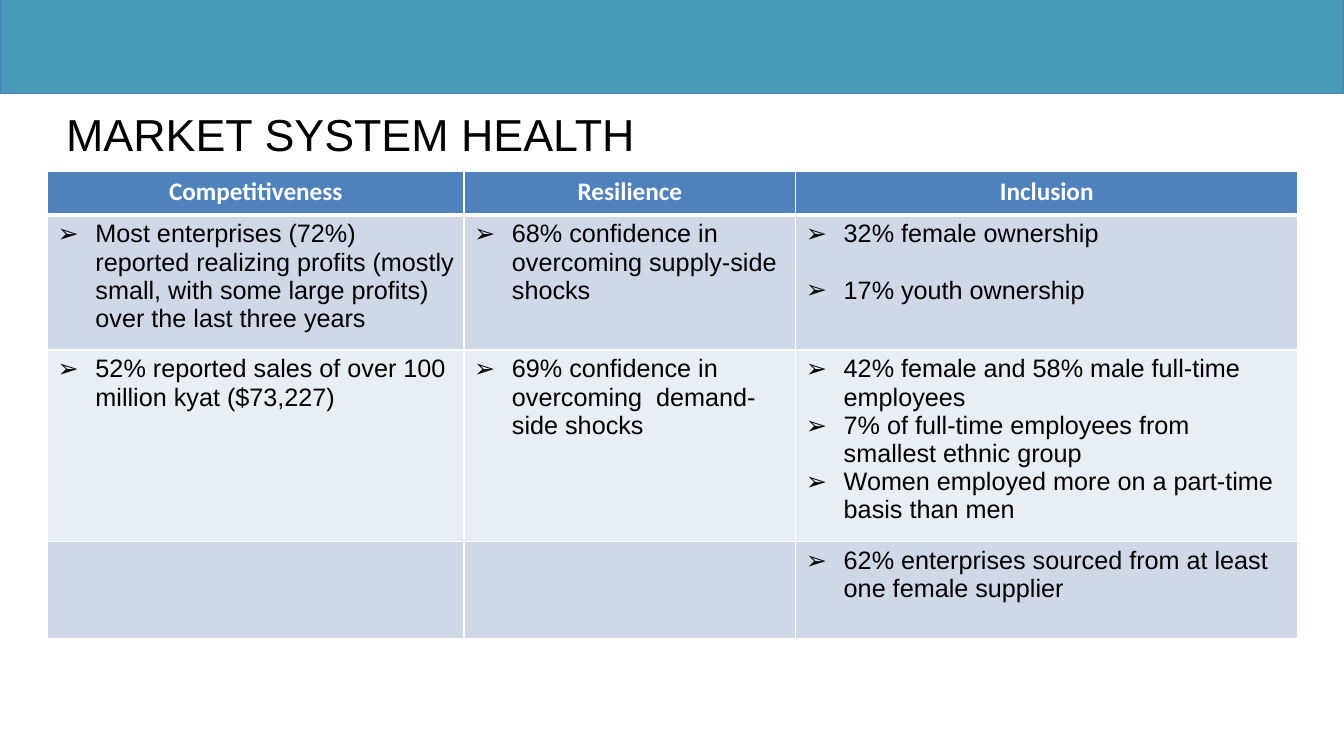
from lxml import etree
from pptx import Presentation
from pptx.dml.color import RGBColor
from pptx.enum import shapes, text
from pptx.oxml.ns import qn
from pptx.util import Pt

TEAL = RGBColor(0x47, 0x99, 0xB5)
EDGE = RGBColor(0x4B, 0x7E, 0xBC)
BLUE = RGBColor(0x4F, 0x81, 0xBD)
DARK = RGBColor(0xD0, 0xD8, 0xE8)
LIGHT = RGBColor(0xE9, 0xED, 0xF4)
WHITE = RGBColor(0xFF, 0xFF, 0xFF)
BLACK = RGBColor(0, 0, 0)

HEADS = ["Competitiveness", "Resilience", "Inclusion"]
ROWS = [
    [["Most enterprises (72%) reported realizing profits (mostly small, "
      "with some large profits) over the last three years"],
     ["68% confidence in overcoming supply-side shocks"],
     ["32% female ownership", "17% youth ownership"]],
    [["52% reported sales of over 100 million kyat ($73,227)"],
     ["69% confidence in overcoming  demand-side shocks"],
     ["42% female and 58% male full-time employees",
      "7% of full-time employees from smallest ethnic group",
      "Women employed more on a part-time basis than men"]],
    [[], [], ["62% enterprises sourced from at least one female supplier"]],
]
WIDTHS = [297.5, 237, 358.5]
HEIGHTS = [31, 96.5, 128.5, 69]


def style(para, size, name, color, bold=False):
    font = para.font
    font.size, font.name, font.bold = Pt(size), name, bold
    font.color.rgb = color


def paint(cell, color, base):
    """Give the cell white borders, the bottom one base points wide, and a fill."""
    props = cell._tc.get_or_add_tcPr()
    for side, width in zip("LRTB", (1, 1, 1, base)):
        line = etree.SubElement(props, qn("a:ln" + side), w=str(Pt(width)))
        fill = etree.SubElement(line, qn("a:solidFill"))
        etree.SubElement(fill, qn("a:srgbClr"), val=str(WHITE))
    cell.fill.solid()
    cell.fill.fore_color.rgb = color


prs = Presentation()
prs.slide_width, prs.slide_height = Pt(960), Pt(540)
slide = prs.slides.add_slide(prs.slide_layouts[6])

band = slide.shapes.add_shape(shapes.MSO_SHAPE.RECTANGLE, 0, 0, Pt(960), Pt(67))
band.shadow.inherit = False
band.fill.solid()
band.fill.fore_color.rgb = TEAL
band.line.color.rgb = EDGE
band.line.width = Pt(0.75)

title = slide.shapes.add_textbox(Pt(21), Pt(70), Pt(459), Pt(47))
frame = title.text_frame
frame.word_wrap = True
frame.margin_bottom = 0
frame.vertical_anchor = text.MSO_ANCHOR.MIDDLE
para = frame.paragraphs[0]
para.text = "MARKET SYSTEM HEALTH"
para.alignment = text.PP_ALIGN.CENTER
style(para, 32, "Arial", BLACK)

table = slide.shapes.add_table(
    len(HEIGHTS), len(WIDTHS), Pt(34), Pt(122.5),
    Pt(sum(WIDTHS)), Pt(sum(HEIGHTS))).table
for col, width in zip(table.columns, WIDTHS):
    col.width = Pt(width)
for row, height in zip(table.rows, HEIGHTS):
    row.height = Pt(height)

for c, head in enumerate(HEADS):
    cell = table.cell(0, c)
    paint(cell, BLUE, 3)
    para = cell.text_frame.paragraphs[0]
    para.text = head
    para.alignment = text.PP_ALIGN.CENTER
    style(para, 18, "Calibri", WHITE, True)

for r, row in enumerate(ROWS, 1):
    for c, items in enumerate(row):
        cell = table.cell(r, c)
        paint(cell, DARK if r % 2 else LIGHT, 1)
        frame = cell.text_frame
        for i, item in enumerate(items):
            para = frame.add_paragraph() if i else frame.paragraphs[0]
            para.text = item
            if i and r == 1:
                para.space_before = Pt(20)
            props = para._p.get_or_add_pPr()
            props.set("marL", str(Pt(27)))
            props.set("indent", str(Pt(-27)))
            etree.SubElement(props, qn("a:buFont"), typeface="Arial")
            etree.SubElement(props, qn("a:buChar"), char="➢")
            style(para, 18, "Arial", BLACK)

prs.save("out.pptx")
